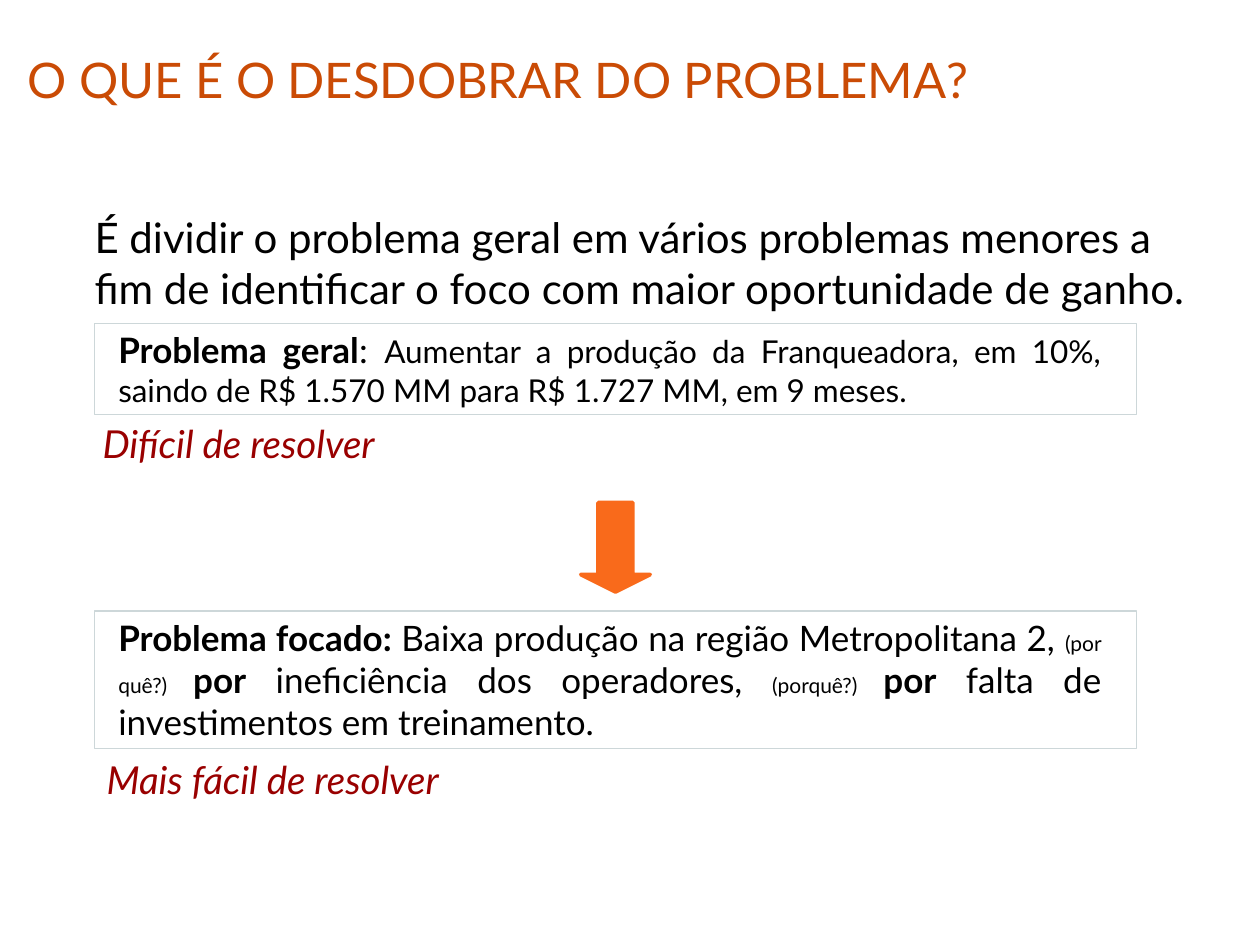
from pptx import Presentation
from pptx.dml.color import RGBColor
from pptx.enum.shapes import MSO_SHAPE
from pptx.enum.text import MSO_ANCHOR, MSO_AUTO_SIZE, PP_ALIGN
from pptx.util import Pt

FONT = "Lato"
BLACK = RGBColor(0x00, 0x00, 0x00)
RED = RGBColor(0x99, 0x00, 0x00)
RUST = RGBColor(0xCA, 0x4B, 0x05)
ORANGE = RGBColor(0xF9, 0x6A, 0x1B)
GRAY = RGBColor(0xCD, 0xD7, 0xD9)

# Content: boxes are (top, height, runs), runs are (text, size, bold)
TITLE = "O QUE É O DESDOBRAR DO PROBLEMA?"
INTRO = ("É dividir o problema geral em vários problemas menores a fim de "
         "identificar o foco com maior oportunidade de ganho.")
PROBLEMS = [
    (185, 52, [
        ("Problema geral", 20, True),
        (": ", 20, False),
        ("Aumentar a produção da Franqueadora, em 10%, saindo de "
         "R$ 1.570 MM para R$ 1.727 MM, em 9 meses.", 18, False),
    ]),
    (349.2, 78.5, [
        ("Problema focado: ", 20, True),
        ("Baixa produção na região Metropolitana 2, ", 20, False),
        ("(por quê?) ", 12, False),
        ("por", 20, True),
        (" ineficiência dos operadores, ", 20, False),
        ("(porquê?) ", 12, False),
        ("por", 20, True),
        (" falta de investimentos em treinamento.", 20, False),
    ]),
]
# Verdicts: (text, left, top, width)
VERDICTS = [
    ("Difícil de resolver", 14.4, 236.2, 244),
    ("Mais fácil de resolver", 8.6, 428.4, 294.5),
]
BOX_LEFT, BOX_WIDTH = 54, 595.4


def set_frame(tf, left, top, right, bottom, anchor=MSO_ANCHOR.TOP):
    tf.word_wrap = True
    tf.auto_size = MSO_AUTO_SIZE.NONE
    tf.vertical_anchor = anchor
    tf.margin_left, tf.margin_top = Pt(left), Pt(top)
    tf.margin_right, tf.margin_bottom = Pt(right), Pt(bottom)


def add_run(p, text, size, color, bold=False, italic=False):
    r = p.add_run()
    r.text = text
    r.font.name, r.font.size = FONT, Pt(size)
    r.font.bold, r.font.italic = bold, italic
    r.font.color.rgb = color


def add_text(s, left, top, width, height):
    sp = s.shapes.add_textbox(Pt(left), Pt(top), Pt(width), Pt(height))
    return sp.text_frame


prs = Presentation()
prs.slide_width, prs.slide_height = Pt(720), Pt(540)
s = prs.slides.add_slide(prs.slide_layouts[5])

# Title
sp = s.shapes.title
sp.left, sp.top, sp.width, sp.height = Pt(8.6), Pt(29.5), Pt(630), Pt(31)
set_frame(sp.text_frame, 7.2, 3.6, 0, 3.6, MSO_ANCHOR.MIDDLE)
p = sp.text_frame.paragraphs[0]
p.alignment = PP_ALIGN.LEFT
add_run(p, TITLE, 28, RUST)

# Definition
tf = add_text(s, BOX_LEFT, 118, 646, 84)
set_frame(tf, 0, 3, 20, 3)
add_run(tf.paragraphs[0], INTRO, 24, BLACK)

# Problem boxes
for top, height, runs in PROBLEMS:
    sp = s.shapes.add_shape(MSO_SHAPE.RECTANGLE, Pt(BOX_LEFT), Pt(top),
                            Pt(BOX_WIDTH), Pt(height))
    sp.shadow.inherit = False
    sp.fill.background()
    sp.line.color.rgb, sp.line.width = GRAY, Pt(0.75)
    set_frame(sp.text_frame, 13.6, 3, 20, 3)
    p = sp.text_frame.paragraphs[0]
    p.alignment = PP_ALIGN.JUSTIFY
    for text, size, bold in runs:
        add_run(p, text, size, BLACK, bold)

# Arrow, centred between the boxes
arrow_width = 39.6
sp = s.shapes.add_shape(MSO_SHAPE.DOWN_ARROW,
                        Pt(BOX_LEFT + (BOX_WIDTH - arrow_width) / 2),
                        Pt(287.2), Pt(arrow_width), Pt(51))
sp.adjustments[0], sp.adjustments[1] = 0.5, 0.25
sp.shadow.inherit = False
sp.fill.solid()
sp.fill.fore_color.rgb = ORANGE
sp.line.color.rgb, sp.line.width = ORANGE, Pt(2.25)

# Verdict under each box
for text, left, top, width in VERDICTS:
    tf = add_text(s, left, top, width, 33.8)
    set_frame(tf, 7.2, 3.6, 7.2, 3.6)
    p = tf.paragraphs[0]
    p.alignment = PP_ALIGN.CENTER
    add_run(p, text, 22, RED, italic=True)

prs.save("out.pptx")
